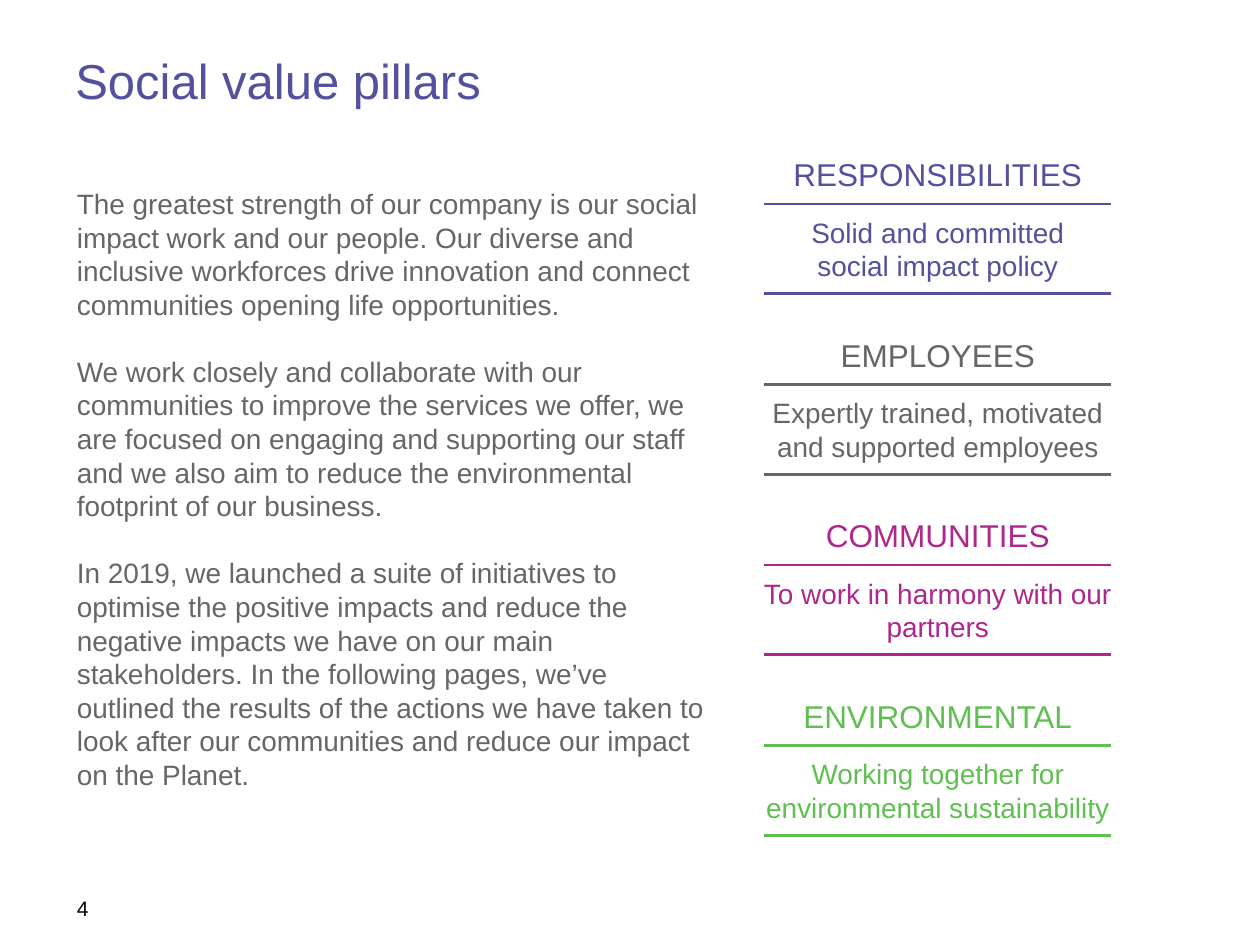
from pptx import Presentation
from pptx.dml.color import RGBColor
from pptx.enum.shapes import MSO_CONNECTOR
from pptx.enum.text import MSO_ANCHOR, PP_ALIGN
from pptx.oxml.ns import qn
from pptx.util import Cm, Pt
from lxml import etree

INDIGO = RGBColor(0x53, 0x51, 0x9E)
GREY = RGBColor(0x66, 0x66, 0x66)
MAGENTA = RGBColor(0xAF, 0x26, 0x8D)
GREEN = RGBColor(0x60, 0xBF, 0x51)
BLACK = RGBColor(0, 0, 0)

# Column of pillars, in centimetres
PILLAR_TOP = 3.0
PILLAR_STEP = 3.64
RULE_LEFT, RULE_RIGHT = 15.41, 22.4

BODY = [
    "The greatest strength of our company is our social impact work and our "
    "people. Our diverse and inclusive workforces drive innovation and connect "
    "communities opening life opportunities.",
    "We work closely and collaborate with our communities to improve the "
    "services we offer, we are focused on engaging and supporting our staff "
    "and we also aim to reduce the environmental footprint of our business.",
    "In 2019, we launched a suite of initiatives to optimise the positive "
    "impacts and reduce the negative impacts we have on our main stakeholders. "
    "In the following pages, we’ve outlined the results of the actions we have "
    "taken to look after our communities and reduce our impact on the Planet.",
]

PILLARS = [
    ("RESPONSIBILITIES", "Solid and committed social impact policy", INDIGO, 7.01),
    ("EMPLOYEES", "Expertly trained, motivated and supported employees", GREY, 7.58),
    ("COMMUNITIES", "To work in harmony with our partners", MAGENTA, 7.58),
    ("ENVIRONMENTAL", "Working together for environmental sustainability", GREEN, 7.58),
]


def add_text(page, paragraphs, left, top, width, height, *, size, color,
             align=PP_ALIGN.LEFT, anchor=MSO_ANCHOR.TOP, gap=0, inset_top=0.13):
    box = page.shapes.add_textbox(Cm(left), Cm(top), Cm(width), Cm(height))
    frame = box.text_frame
    frame.word_wrap = True
    frame.vertical_anchor = anchor
    frame.margin_top = Cm(inset_top)
    for index, text in enumerate(paragraphs):
        para = frame.paragraphs[0] if index == 0 else frame.add_paragraph()
        para.alignment = align
        para.space_before = Pt(gap if index else 0)
        span = para.add_run()
        span.text = text
        span.font.name = "Arial"
        span.font.size = Pt(size)
        span.font.color.rgb = color


def add_rule(page, top, color):
    rule = page.shapes.add_connector(
        MSO_CONNECTOR.STRAIGHT, Cm(RULE_LEFT), Cm(top), Cm(RULE_RIGHT), Cm(top))
    rule.line.color.rgb = color
    rule.line.width = Pt(1.5)
    properties = rule._element.find(qn("p:spPr"))
    etree.SubElement(properties, qn("a:effectLst"))


def add_pillar(page, top, heading, statement, color, width):
    center = (RULE_LEFT + RULE_RIGHT) / 2
    add_text(page, [heading], center - 3.44, top, 6.88, 1.02,
             size=18, color=color, align=PP_ALIGN.CENTER)
    add_rule(page, top + 1.11, color)
    add_text(page, [statement], center - width / 2, top + 1.2, width, 1.62,
             size=16, color=color, align=PP_ALIGN.CENTER, anchor=MSO_ANCHOR.MIDDLE)
    add_rule(page, top + 2.92, color)


def main():
    deck = Presentation()
    deck.slide_width, deck.slide_height = Cm(25.4), Cm(19.05)
    page = deck.slides.add_slide(deck.slide_layouts[6])

    # Title, body and page number
    add_text(page, ["Social value pillars"], 1.27, 0.76, 22.86, 2.16,
             size=28, color=INDIGO, inset_top=0.25)
    add_text(page, BODY, 1.3, 3.63, 13.18, 12.57, size=16, color=GREY, gap=19.2)
    add_text(page, ["4"], 1.3, 17.93, 5.92, 1.02, size=12, color=BLACK)

    # Pillars at equal steps
    for index, pillar in enumerate(PILLARS):
        add_pillar(page, PILLAR_TOP + index * PILLAR_STEP, *pillar)

    deck.save("out.pptx")


if __name__ == "__main__":
    main()
